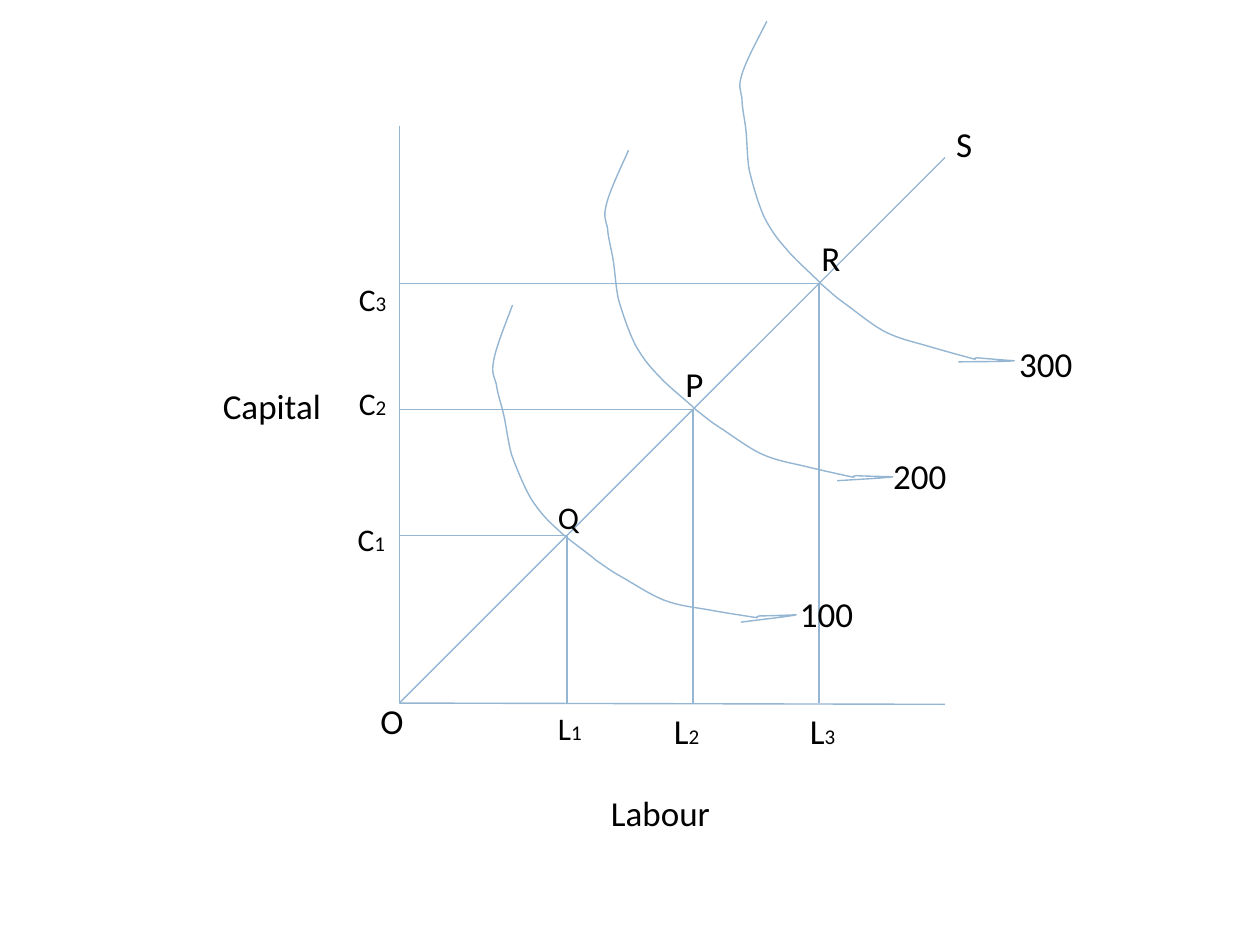
from math import cos, radians, sin

from lxml import etree
from pptx import Presentation
from pptx.dml.color import RGBColor
from pptx.enum.shapes import MSO_CONNECTOR
from pptx.enum.text import MSO_AUTO_SIZE
from pptx.oxml.ns import qn
from pptx.util import Inches, Pt

STRAIGHT = MSO_CONNECTOR.STRAIGHT
GROW = MSO_AUTO_SIZE.SHAPE_TO_FIT_TEXT
COLORS = {"line": "94B6D2", "text": "000000"}
FONT = "Calibri"
COLS, ROWS = 10, 7.5
CELL = Inches(1)

TILT = 33.5
BENDS = [
    (4.07, 2.42),
    (4.01, 2.58), (3.94, 2.75), (3.92, 2.86),
    (3.9, 2.96), (3.92, 2.98), (3.94, 3.05),
    (3.95, 3.13), (3.98, 3.21), (4, 3.3),
    (4.02, 3.39), (4.03, 3.5), (4.06, 3.61),
    (4.1, 3.72), (4.16, 3.87), (4.22, 3.97),
    (4.28, 4.06), (4.33, 4.12), (4.42, 4.2),
    (4.5, 4.28), (4.65, 4.38), (4.73, 4.45),
    (4.82, 4.51), (4.84, 4.53), (4.93, 4.58),
    (5.02, 4.63), (5.17, 4.73), (5.28, 4.77),
    (5.39, 4.81), (5.49, 4.82), (5.61, 4.84),
    (5.72, 4.86), (5.91, 4.89), (5.98, 4.9),
    (6.05, 4.91), (5.97, 4.9), (6.03, 4.89),
    (6.09, 4.89), (6.35, 4.88), (6.32, 4.88),
    (6.3, 4.89), (5.95, 4.93), (5.88, 4.94),
]
CURVES = [
    ((3.43, 3.21, 3.26, 1.33), TILT),
    ((4.26, 2.04, 3.26, 1.33), 37),
    ((5.28, 1.06, 3.26, 1.33), 39.9),
]

LABELS = [
    ("L", "1", 18, (4.33, 5.58, 0.39, 0.4)),
    ("L", "2", 20, (5.25, 5.58, 0.41, 0.44)),
    ("L", "3", 20, (6.33, 5.58, 0.41, 0.44)),
    ("C", "1", 18, (2.74, 4.08, 0.42, 0.4)),
    ("C", "2", 18, (2.75, 3, 0.44, 0.4)),
    ("C", "3", 18, (2.75, 2.17, 0.44, 0.4)),
    ("Q", "", 18, (4.33, 3.9, 0.37, 0.4)),
    ("P", "", 20, (5.34, 2.83, 0.35, 0.44)),
    ("R", "", 20, (6.42, 1.83, 0.35, 0.44)),
    ("S", "", 20, (7.49, 0.92, 0.33, 0.44)),
    ("O", "", 20, (2.92, 5.5, 0.39, 0.44)),
    ("100", "", 20, (6.25, 4.65, 0.63, 0.44)),
    ("200", "", 20, (6.99, 3.56, 0.63, 0.44)),
    ("300", "", 20, (7.99, 2.67, 0.63, 0.44)),
    ("Capital", "", 20, (1.67, 3, 0.99, 0.44)),
    ("Labour", "", 20, (4.75, 6.23, 0.99, 0.44)),
]


def grid(*cells):
    """Turn columns and rows into lengths."""
    return [round(c * CELL) for c in cells]


def ink(line):
    """Give a line the colour and width of the graph."""
    line.color.rgb = RGBColor.from_string(COLORS["line"])
    line.width = Pt(0.79)


def rule(slide, *ends):
    """Draw a straight line between two grid points."""
    line = slide.shapes.add_connector(STRAIGHT, *grid(*ends))
    ink(line.line)
    props = line._element.find(qn("p:spPr"))
    etree.SubElement(props, qn("a:effectLst"))


def axes(slide, box):
    """Draw the axes, the ray and the drop lines in a box."""
    left, top, wide, high = box
    right, base = left + wide, top + high
    rule(slide, left, top, left, base)
    rule(slide, right, base + 0.01, left, base)
    rule(slide, right, base - wide, left, base)
    for step in (2, 1, 0):
        gap = 1.33 + step
        x, y = left + gap, base - gap
        rule(slide, x, y, x, base)
        rule(slide, x, y, left, y)


def level():
    """Return the bends about their centre with the tilt taken out."""
    left, top, wide, high = CURVES[0][0]
    c, s = cos(radians(TILT)), sin(radians(TILT))
    rays = [(x - left - wide / 2, y - top - high / 2) for x, y in BENDS]
    return [(x * c + y * s, y * c - x * s) for x, y in rays]


def bend(shape):
    """Turn each three line segments into one Bezier segment."""
    lines = list(shape._element.iter(qn("a:lnTo")))
    for first, *rest in zip(lines[::3], lines[1::3], lines[2::3]):
        first.tag = qn("a:cubicBezTo")
        for line in rest:
            first.append(line[0])
            line.getparent().remove(line)


def curve(slide, box, turn):
    """Draw a turned isoquant in a box."""
    left, top, wide, high = box
    points = [grid(left + wide / 2 + x, top + high / 2 + y)
              for x, y in level()]
    pen = slide.shapes.build_freeform(*points[0])
    pen.add_line_segments(points[1:], close=False)
    shape = pen.convert_to_shape()
    bend(shape)
    shape.left, shape.top, shape.width, shape.height = grid(*box)
    shape.rotation = turn
    shape.shadow.inherit = False
    shape.fill.background()
    ink(shape.line)


def label(slide, name, mark, size, box):
    """Write a name and its small index in a box."""
    frame = slide.shapes.add_textbox(*grid(*box)).text_frame
    frame.word_wrap = False
    frame.auto_size = GROW
    part = frame.paragraphs[0]
    for text, points in ((name, size), (mark, 12)):
        if text:
            run = part.add_run()
            run.text = text
            run.font.name = FONT
            run.font.size = Pt(points)
            run.font.color.rgb = RGBColor.from_string(COLORS["text"])


def main():
    """Build and save the isoquant slide."""
    deck = Presentation()
    deck.slide_width, deck.slide_height = grid(COLS, ROWS)
    slide = deck.slides.add_slide(deck.slide_layouts[6])
    axes(slide, (3.17, 1, 4.33, 4.58))
    for place in CURVES:
        curve(slide, *place)
    for item in LABELS:
        label(slide, *item)
    deck.save("out.pptx")


if __name__ == "__main__":
    main()
